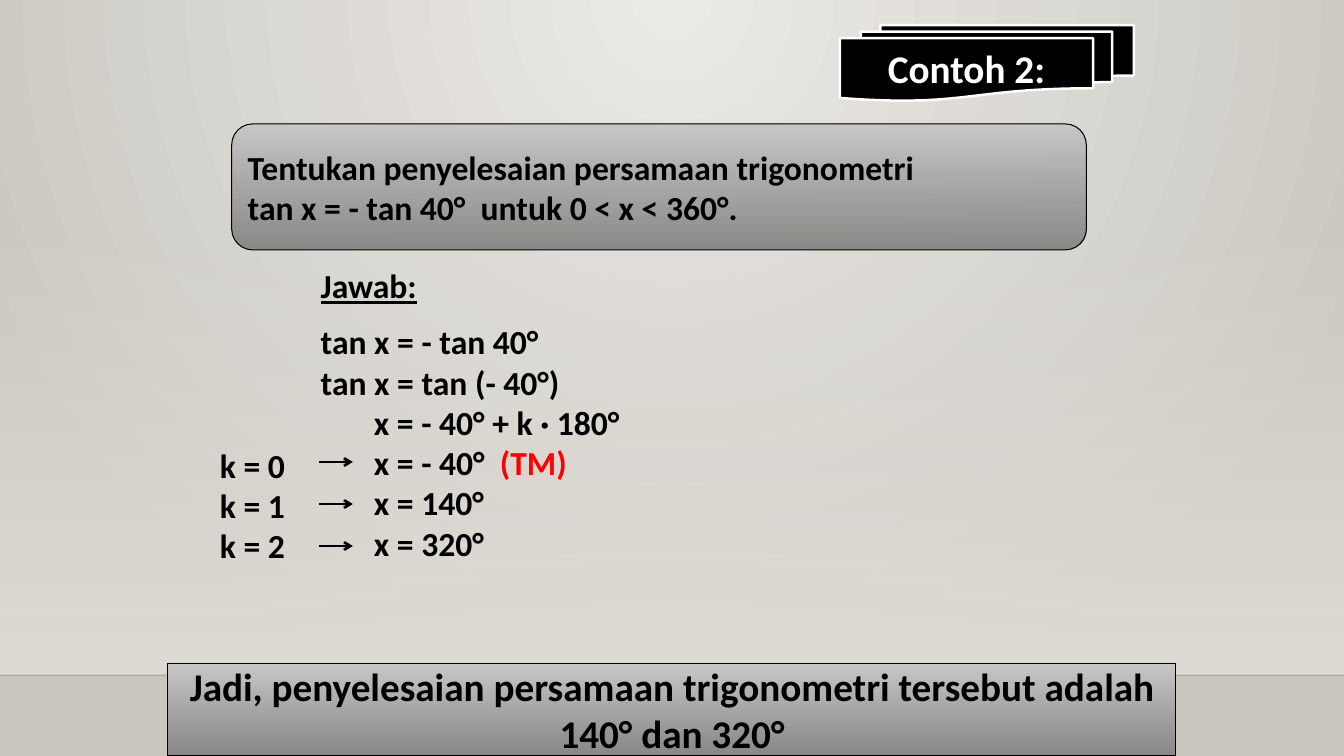
from lxml import etree
from pptx import Presentation
from pptx.dml.color import RGBColor
from pptx.enum.shapes import MSO_CONNECTOR, MSO_SHAPE
from pptx.enum.text import MSO_ANCHOR, PP_ALIGN
from pptx.oxml.ns import qn
from pptx.util import Pt

# Content
TITLE = "Contoh 2:"
QUESTION = [
    "Tentukan penyelesaian persamaan trigonometri",
    "tan x = - tan 40°  untuk 0 < x < 360°.",
]
ANSWER_HEADING = "Jawab:"
EQUATIONS = ["tan x = - tan 40°", "tan x = tan (- 40°)"]
SOLUTIONS = ["x = - 40° + k · 180°", "x = - 40°  ", "x = 140°", "x = 320°"]
REJECTED_INDEX, REJECTED_MARK = 1, "(TM)"
K_VALUES = ["k = 0", "k = 1", "k = 2"]
CONCLUSION = "Jadi, penyelesaian persamaan trigonometri tersebut adalah 140° dan 320°"

# Layout and style
WIDTH, HEIGHT = 960, 540
FLOOR_TOP = 482.4
SOLUTION_INDENT = 38
ARROW_LEFT, ARROW_RIGHT, ARROW_TOP, ARROW_STEP = 228, 252, 330, 30
FONT = "Calibri"
BLACK, WHITE, RED = "000000", "FFFFFF", "FF0000"
PANEL_STOPS = [("C8C8C8", 100), ("848484", 92)]


def color(value):
    return RGBColor.from_string(value)


def set_alpha(parent, percent):
    for element in parent.iter(qn("a:srgbClr")):
        etree.SubElement(element, qn("a:alpha")).set("val", str(percent * 1000))


def fill_gradient(fill, stops):
    fill.gradient()
    fill.gradient_angle = 270
    for stop, position, (value, alpha) in zip(fill.gradient_stops, (0, 1), stops):
        stop.position = position
        stop.color.rgb = color(value)
    return stops


def add_panel(kind, box, stops=None, line=None, line_width=0.75):
    shape = slide.shapes.add_shape(kind, *map(Pt, box))
    shape.shadow.inherit = False
    if stops:
        fill_gradient(shape.fill, stops)
        for element, (_, alpha) in zip(shape._element.spPr.iter(qn("a:gs")), stops):
            if alpha < 100:
                set_alpha(element, alpha)
    else:
        shape.fill.solid()
        shape.fill.fore_color.rgb = color(BLACK)
    if line:
        shape.line.color.rgb = color(line)
        shape.line.width = Pt(line_width)
    else:
        shape.line.fill.background()
    return shape


def add_line(start, end, width, arrow=False, alpha=100):
    connector = slide.shapes.add_connector(MSO_CONNECTOR.STRAIGHT, *map(Pt, start + end))
    connector.line.color.rgb = color(BLACK)
    connector.line.width = Pt(width)
    properties = connector._element.spPr
    if alpha < 100:
        set_alpha(properties, alpha)
    if arrow:
        etree.SubElement(connector.line._get_or_add_ln(), qn("a:tailEnd")).set("type", "arrow")
    etree.SubElement(properties, qn("a:effectLst"))


def format_run(run, size, value):
    run.font.name = FONT
    run.font.size = Pt(size)
    run.font.bold = True
    run.font.color.rgb = color(value)


def write(shape, lines, size=24, value=BLACK, alignment=PP_ALIGN.LEFT, anchor=MSO_ANCHOR.MIDDLE):
    frame = shape.text_frame
    frame.word_wrap = True
    frame.vertical_anchor = anchor
    frame.text = "\n".join(lines)
    for paragraph in frame.paragraphs:
        paragraph.alignment = alignment
        for run in paragraph.runs:
            format_run(run, size, value)
    return frame.paragraphs


def add_text(box, lines):
    return write(slide.shapes.add_textbox(*map(Pt, box)), lines, anchor=MSO_ANCHOR.TOP)


presentation = Presentation()
presentation.slide_width, presentation.slide_height = Pt(WIDTH), Pt(HEIGHT)
slide = presentation.slides.add_slide(presentation.slide_layouts[6])

# Background: radial gradient, wall haze and floor line
fill_gradient(slide.background.fill, [("ECEAE7", 100), ("CAC7C1", 100)])
gradient = next(slide.background._cSld.iter(qn("a:gradFill")))
gradient.remove(gradient.find(qn("a:lin")))
radial = etree.SubElement(gradient, qn("a:path"))
radial.set("path", "circle")
center = etree.SubElement(radial, qn("a:fillToRect"))
for side, percent in zip("ltrb", (43, 0, 43, 100)):
    center.set(side, str(percent * 1000))
add_panel(MSO_SHAPE.RECTANGLE, (0, 159, WIDTH, FLOOR_TOP - 159), [("DFDBD5", 0), ("DFDBD5", 100)])
add_line((0, FLOOR_TOP), (WIDTH, FLOOR_TOP), 1, alpha=20)

# Title and question
title = add_panel(MSO_SHAPE.FLOWCHART_MULTIDOCUMENT, (600, 18, 210, 54), line=WHITE, line_width=1.75)
write(title, [TITLE], 28, WHITE, PP_ALIGN.CENTER)
question = add_panel(MSO_SHAPE.ROUNDED_RECTANGLE, (165.5, 88.5, 610.5, 90), PANEL_STOPS, BLACK)
write(question, QUESTION)

# Worked answer
answer = add_text((222, 186, 498, 309), [ANSWER_HEADING] + EQUATIONS + SOLUTIONS)
answer[0].runs[0].font.underline = True
answer[1].space_before = Pt(11)
solution_paragraphs = answer[-len(SOLUTIONS):]
for paragraph in solution_paragraphs:
    paragraph._p.get_or_add_pPr().set("marL", str(Pt(SOLUTION_INDENT)))
rejected = solution_paragraphs[REJECTED_INDEX].add_run()
rejected.text = REJECTED_MARK
format_run(rejected, 24, RED)

# Values of k with their arrows
add_text((150, 314, 88, 94), K_VALUES)
for index in range(len(K_VALUES)):
    arrow_y = ARROW_TOP + index * ARROW_STEP
    add_line((ARROW_LEFT, arrow_y), (ARROW_RIGHT, arrow_y), 1.75, arrow=True)

# Conclusion
conclusion = add_panel(MSO_SHAPE.RECTANGLE, (120, 474, 720, 66), PANEL_STOPS, BLACK)
write(conclusion, [CONCLUSION], 28, alignment=PP_ALIGN.CENTER)

presentation.save("out.pptx")
